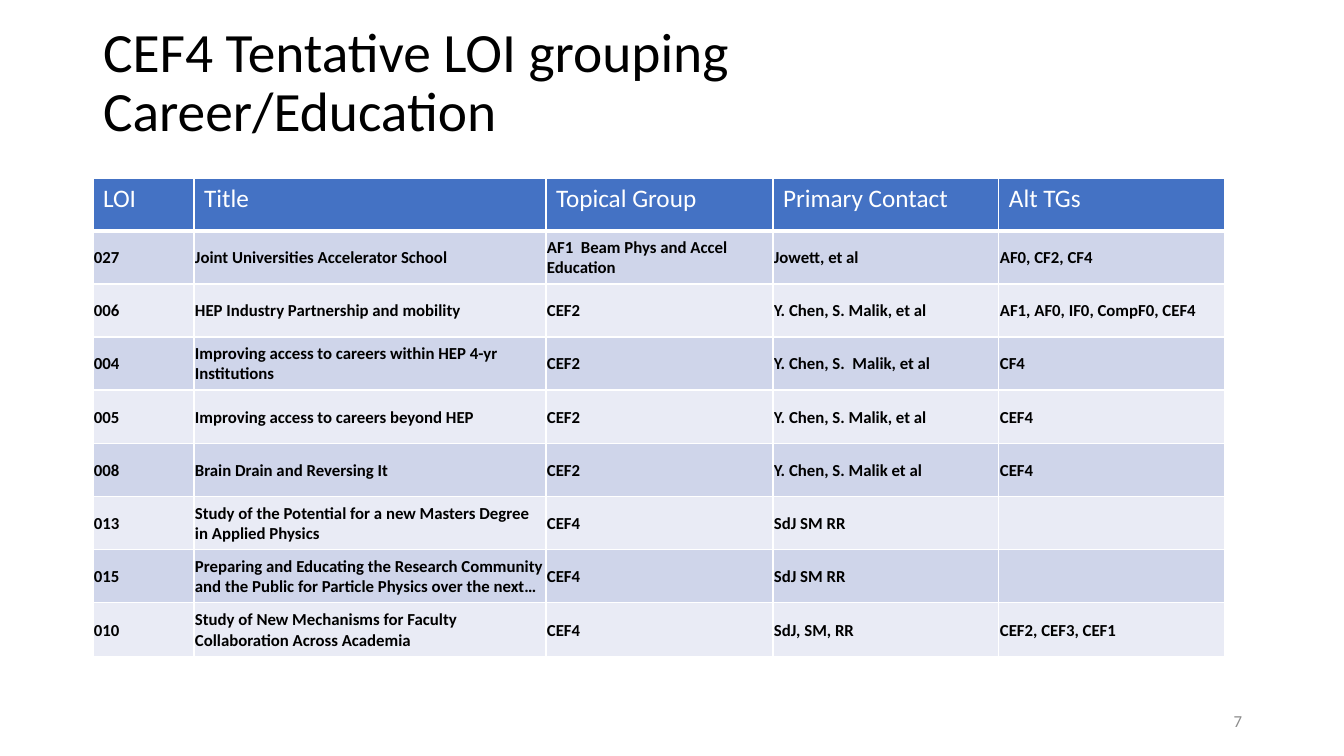
import lxml.etree
import pptx
import pptx.dml.color
import pptx.enum.text
import pptx.oxml.ns
import pptx.util

PX = 914400 / 100.8
ALIGN = pptx.enum.text.PP_ALIGN
MIDDLE = pptx.enum.text.MSO_ANCHOR.MIDDLE
TOP = pptx.enum.text.MSO_ANCHOR.TOP

HEADER = ["LOI", "Title", "Topical Group", "Primary Contact", "Alt TGs"]
LOIS = [
    ["027", "Joint Universities Accelerator School",
     "AF1  Beam Phys and Accel Education", "Jowett, et al", "AF0, CF2, CF4"],
    ["006", "HEP Industry Partnership and mobility", "CEF2",
     "Y. Chen, S. Malik, et al", "AF1, AF0, IF0, CompF0, CEF4"],
    ["004", "Improving access to careers within HEP 4-yr Institutions", "CEF2",
     "Y. Chen, S.  Malik, et al", "CF4"],
    ["005", "Improving access to careers beyond HEP", "CEF2",
     "Y. Chen, S. Malik, et al", "CEF4"],
    ["008", "Brain Drain and Reversing It", "CEF2",
     "Y. Chen, S. Malik et al", "CEF4"],
    ["013", "Study of the Potential for a new Masters Degree in Applied Physics",
     "CEF4", "SdJ SM RR", ""],
    ["015", "Preparing and Educating the Research Community and the Public "
     "for Particle Physics over the next…", "CEF4", "SdJ SM RR", ""],
    ["010", "Study of New Mechanisms for Faculty Collaboration Across Academia",
     "CEF4", "SdJ, SM, RR", "CEF2, CEF3, CEF1"],
]
COLUMNS = [101, 352, 227, 226, 226]


def emu(px):
    return pptx.util.Emu(round(px * PX))


def rgb(value):
    return pptx.dml.color.RGBColor.from_string(value)


def apply(obj, values):
    for name, value in values.items():
        setattr(obj, name, value)


class Deck:
    font = "Calibri"
    header_fill = "4472C4"
    bands = ["CFD5EA", "E9EBF5"]
    border = "FFFFFF"

    def __init__(self, width, height):
        self.prs = pptx.Presentation()
        apply(self.prs, {"slide_width": emu(width), "slide_height": emu(height)})
        self.s = self.prs.slides.add_slide(self.prs.slide_layouts[5])

    def set_text(self, tf, text, size, color, align=ALIGN.LEFT, bold=False, spacing=None):
        tf.text = text
        p = tf.paragraphs[0]
        apply(p, {"alignment": align, "line_spacing": spacing})
        for r in p.runs:
            apply(r.font, {"name": self.font, "size": pptx.util.Pt(size), "bold": bold})
            r.font.color.rgb = rgb(color)

    def title(self, box, text):
        sp = self.s.shapes.title
        apply(sp, dict(zip(("left", "top", "width", "height"), map(emu, box))))
        apply(sp.text_frame, {"word_wrap": True, "vertical_anchor": MIDDLE,
                              "auto_size": pptx.enum.text.MSO_AUTO_SIZE.NONE})
        self.set_text(sp.text_frame, text, 39.6, "000000", spacing=0.9)

    def label(self, box, text, size, color, align):
        tf = self.s.shapes.add_textbox(*map(emu, box)).text_frame
        apply(tf, {"word_wrap": True, "vertical_anchor": MIDDLE})
        self.set_text(tf, text, size, color, align)

    def borders(self, cell, bottom):
        tcPr = cell._tc.get_or_add_tcPr()
        widths = {"a:lnL": 1, "a:lnR": 1, "a:lnT": 1, "a:lnB": bottom}
        for i, (tag, width) in enumerate(widths.items()):
            ln = lxml.etree.Element(pptx.oxml.ns.qn(tag), w=str(int(pptx.util.Pt(width))))
            fill = lxml.etree.SubElement(ln, pptx.oxml.ns.qn("a:solidFill"))
            lxml.etree.SubElement(fill, pptx.oxml.ns.qn("a:srgbClr"), val=self.border)
            tcPr.insert(i, ln)

    def cell(self, cell, text, is_header, fill, align):
        cell.fill.solid()
        cell.fill.fore_color.rgb = rgb(fill)
        self.borders(cell, 3 if is_header else 1)
        if is_header:
            cell.vertical_anchor = TOP
            self.set_text(cell.text_frame, text, 18, "FFFFFF")
        elif text:
            apply(cell, {"vertical_anchor": MIDDLE, "margin_left": emu(1),
                         "margin_right": emu(1), "margin_top": emu(1),
                         "margin_bottom": emu(0)})
            self.set_text(cell.text_frame, text, 12, "000000", align, bold=True)

    def table(self, left, top, height, columns, rows, justified):
        n = len(rows)
        table = self.s.shapes.add_table(n, len(columns), emu(left), emu(top),
                                        emu(sum(columns)), emu(height)).table
        for column, width in zip(table.columns, columns):
            column.width = emu(width)
        for i, values in enumerate(rows):
            # Row edges divide the height evenly on whole pixels
            table.rows[i].height = emu(height * (i + 1) // n - height * i // n)
            fill = self.bands[(i - 1) % 2] if i else self.header_fill
            for j, text in enumerate(values):
                align = ALIGN.JUSTIFY if (i, j) in justified else ALIGN.LEFT
                self.cell(table.cell(i, j), text, i == 0, fill, align)


def main():
    deck = Deck(1344, 756)
    # Title
    deck.title((93, 48, 1159, 72), "CEF4 Tentative LOI grouping\vCareer/Education")
    # Letters of interest
    last = len(LOIS)
    deck.table(93, 178, 479, COLUMNS, [HEADER] + LOIS, {(last, 0), (last, 3)})
    # Slide number
    deck.label((950, 701, 302, 40), "7", 12, "8C8C8C", ALIGN.RIGHT)
    deck.prs.save("out.pptx")


if __name__ == "__main__":
    main()
